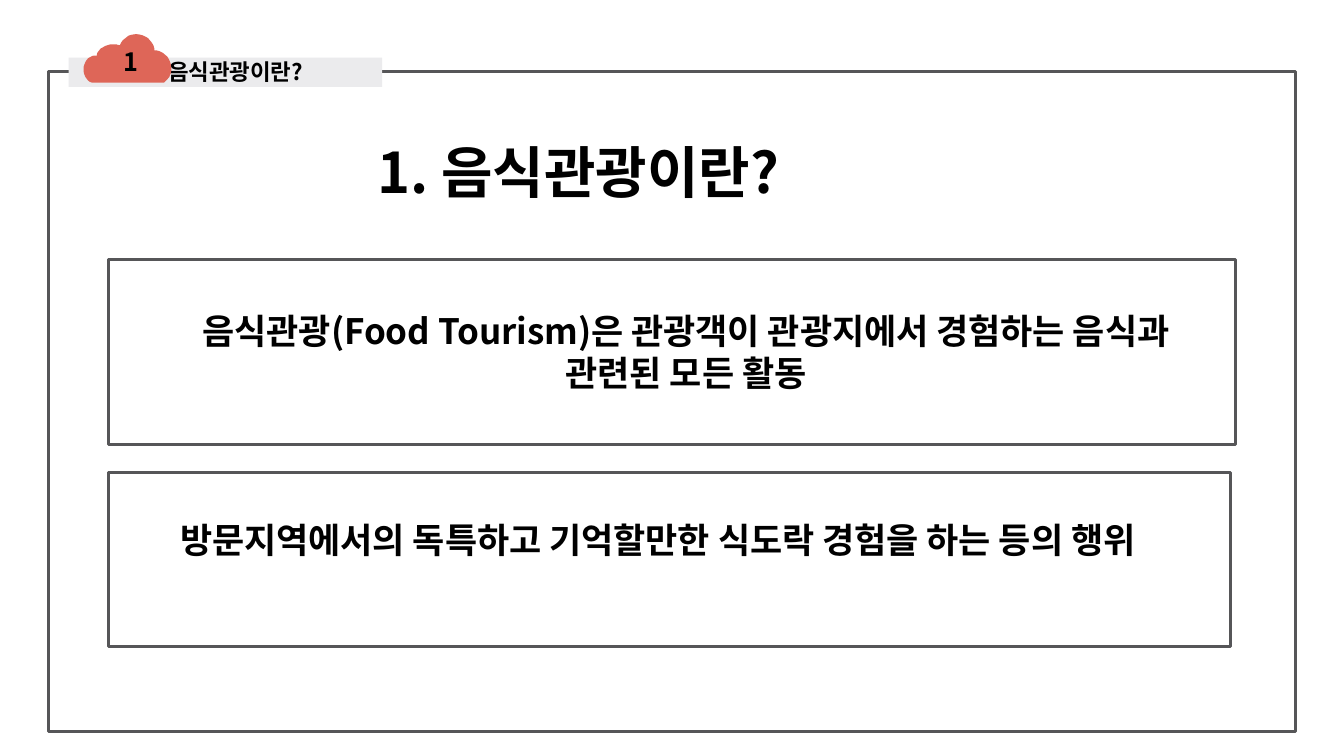
import pptx
import pptx.dml.color
import pptx.enum.shapes
import pptx.enum.text
import pptx.oxml.ns
import pptx.util
from pptx.util import Cm

RGBColor = pptx.dml.color.RGBColor
ALIGN = pptx.enum.text.PP_ALIGN
BLACK = RGBColor(0x00, 0x00, 0x00)
WHITE = RGBColor(0xFF, 0xFF, 0xFF)
GRAY = RGBColor(0x56, 0x56, 0x58)
PALE = RGBColor(0xEB, 0xEB, 0xED)
CORAL = RGBColor(0xDE, 0x66, 0x58)
FONT = "Noto Sans CJK KR"

# Cloud outline in hundredths of a centimetre: one point is a line, three a curve
CLOUD_START = (343, 86)
CLOUD = [
    [(366, 86), (384, 102), (389, 122)], [(389, 127)], [(394, 127)],
    [(417, 132), (432, 150), (432, 173)],
    [(432, 185), (427, 196), (419, 203)], [(414, 208)], [(234, 208)], [(231, 208)],
    [(218, 203), (211, 190), (211, 175)],
    [(211, 157), (221, 142), (239, 140)], [(244, 140)], [(244, 137)],
    [(249, 122), (267, 112), (284, 112)],
    [(290, 112), (295, 112), (300, 114)], [(302, 114)],
    [(310, 97), (325, 86), (343, 86)],
]


def paint(shape, fill=None, line=None):
    shape.shadow.inherit = False
    if fill is None:
        shape.fill.background()
    else:
        shape.fill.solid()
        shape.fill.fore_color.rgb = fill
    if line is None:
        shape.line.fill.background()
    else:
        shape.line.color.rgb = line
        shape.line.width = pptx.util.Pt(2)


def add_box(page, place, **colours):
    kind = pptx.enum.shapes.MSO_SHAPE.RECTANGLE
    paint(page.shapes.add_shape(kind, *map(Cm, place)), **colours)


def write(box, text, size, align=ALIGN.LEFT):
    frame = box.text_frame
    layout = {"word_wrap": True,
              "auto_size": pptx.enum.text.MSO_AUTO_SIZE.NONE,
              "vertical_anchor": pptx.enum.text.MSO_ANCHOR.TOP}
    for name, value in layout.items():
        setattr(frame, name, value)
    para = frame.paragraphs[0]
    para.alignment = align
    span = para.add_run()
    span.text = text
    style = {"name": FONT, "size": pptx.util.Pt(size), "bold": True}
    for name, value in style.items():
        setattr(span.font, name, value)
    span.font.color.rgb = BLACK
    # East Asian typeface
    latin = span.font._element.find(pptx.oxml.ns.qn("a:latin"))
    east = pptx.oxml.parse_xml(
        f'<a:ea {pptx.oxml.ns.nsdecls("a")} typeface="{FONT}"/>')
    latin.addnext(east)


def add_text(page, place, text, size, align=ALIGN.LEFT):
    write(page.shapes.add_textbox(*map(Cm, place)), text, size, align)


def set_title(page, place, text, size):
    title = page.shapes.title
    for name, value in zip(("left", "top", "width", "height"), place):
        setattr(title, name, Cm(value))
    write(title, text, size)


def curve_points(start, controls, steps=8):
    corners = [start, *controls]
    for step in range(1, steps + 1):
        t = step / steps
        weights = ((1 - t) ** 3, 3 * t * (1 - t) ** 2, 3 * t * t * (1 - t), t ** 3)
        yield tuple(sum(w * corner[axis] for w, corner in zip(weights, corners))
                    for axis in (0, 1))


def add_cloud(page):
    points, last = [], CLOUD_START
    for part in CLOUD:
        points += curve_points(last, part) if len(part) == 3 else part
        last = part[-1]
    builder = page.shapes.build_freeform(*CLOUD_START, scale=float(Cm(0.01)))
    builder.add_line_segments(points, close=True)
    paint(builder.convert_to_shape(), fill=CORAL)


def main():
    deck = pptx.Presentation()
    deck.slide_width, deck.slide_height = Cm(33.87), Cm(19.05)
    page = deck.slides.add_slide(deck.slide_layouts[5])
    page.background.fill.solid()
    page.background.fill.fore_color.rgb = WHITE

    # Frame and section tab
    add_box(page, (1.22, 1.8, 31.42, 16.64), line=GRAY)
    add_box(page, (1.73, 1.45, 7.9, 0.74), fill=PALE)
    add_text(page, (3.99, 1.35, 9.22, 2.24), "음식관광이란?", 16)
    add_cloud(page)
    add_text(page, (2.87, 1.04, 1.02, 1.02), "1", 18)

    # Heading
    set_title(page, (8.94, 3.35, 16.26, 1.96), " 1. 음식관광이란?", 40)

    # Definitions: box, then text place
    definitions = [
        ((2.74, 6.53, 28.4, 4.67), (3.94, 7.67, 26.7, 2.39),
         "음식관광(Food Tourism)은 관광객이 관광지에서 경험하는 음식과 관련된 모든 활동"),
        ((2.74, 11.91, 28.27, 4.39), (3.23, 12.93, 26.7, 2.39),
         "방문지역에서의 독특하고 기억할만한 식도락 경험을 하는 등의 행위"),
    ]
    for box_place, text_place, text in definitions:
        add_box(page, box_place, line=GRAY)
        add_text(page, text_place, text, 25, ALIGN.CENTER)

    deck.save("out.pptx")


if __name__ == "__main__":
    main()
